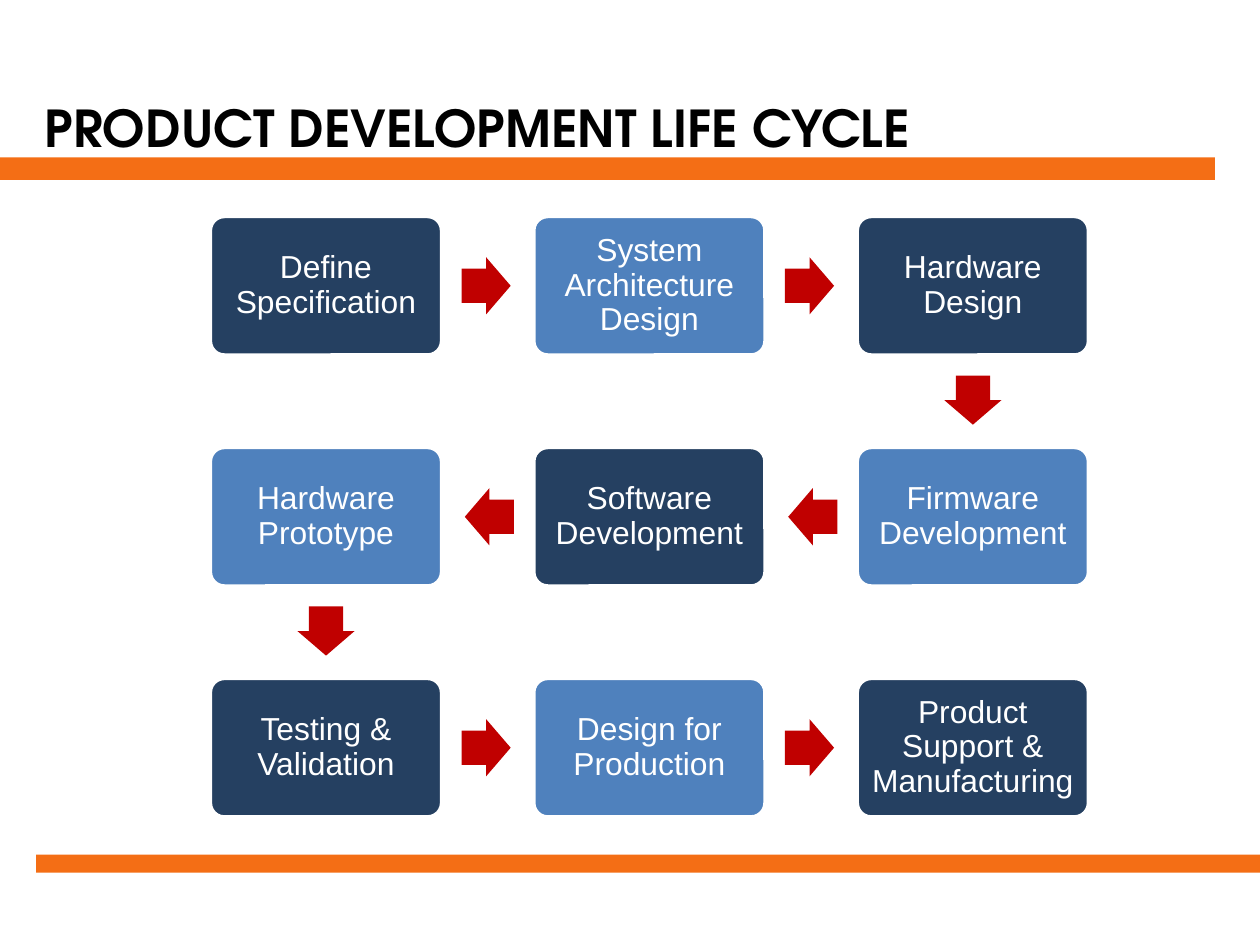
from dataclasses import dataclass
from itertools import pairwise

from pptx import Presentation
from pptx.dml.color import RGBColor
from pptx.enum.shapes import MSO_SHAPE
from pptx.enum.text import MSO_ANCHOR, PP_ALIGN
from pptx.shapes.autoshape import Shape
from pptx.slide import Slide
from pptx.util import Cm, Inches, Pt

RECTANGLE, ROUNDED = MSO_SHAPE.RECTANGLE, MSO_SHAPE.ROUNDED_RECTANGLE
ARROW = MSO_SHAPE.RIGHT_ARROW
MIDDLE, BOTTOM = MSO_ANCHOR.MIDDLE, MSO_ANCHOR.BOTTOM
LEFT, CENTER = PP_ALIGN.LEFT, PP_ALIGN.CENTER
SLIDE_WIDTH = Cm(28)
SLIDE_HEIGHT = Cm(21)


@dataclass(frozen=True)
class Theme:
    bar: str = "F46E15"
    step_fills: tuple[str, str] = ("254061", "4F81BD")
    step_text: str = "FFFFFF"
    step_line: str = "FFFFFF"
    step_line_width: float = 2
    arrow: str = "C00000"
    title_text: str = "000000"
    title_font: str = "TeX Gyre Adventor"
    title_size: float = 32
    step_font: str = "Arial"
    step_size: float = 20


@dataclass(frozen=True)
class Area:
    """A rectangle in percent of the slide's width and height."""
    left: float
    top: float
    width: float
    height: float

    def lengths(self) -> tuple[int, int, int, int]:
        return (round(self.left * SLIDE_WIDTH / 100),
                round(self.top * SLIDE_HEIGHT / 100),
                round(self.width * SLIDE_WIDTH / 100),
                round(self.height * SLIDE_HEIGHT / 100))


@dataclass(frozen=True)
class Step:
    label: str
    column: int
    row: int
    fill: str


THEME = Theme()
TITLE = "PRODUCT DEVELOPMENT LIFE CYCLE"
TITLE_AREA = Area(3.57, 4.76, 92.86, 11.9)
BARS = (Area(0, 16.65, 96.43, 2.4), Area(2.88, 90.43, 97.12, 1.93))

COLUMNS = 3
FIRST_STEP = Area(16.71, 22.93, 18.33, 14.63)
COLUMN_PITCH, ROW_PITCH = 25.67, 24.44
ARROW_WIDTH, ARROW_HEIGHT = 3.9, 6.05
ARROW_POSITION = 0.495  # share of the way from one step to the next
LABELS = (
    "Define Specification", "System Architecture Design", "Hardware Design",
    "Firmware Development", "Software Development", "Hardware Prototype",
    "Testing & Validation", "Design for Production",
    "Product Support & Manufacturing",
)


def snake_steps() -> list[Step]:
    """Lay the steps out row by row, every second row from right to left."""
    steps = []
    for index, label in enumerate(LABELS):
        row, column = divmod(index, COLUMNS)
        if row % 2:
            column = COLUMNS - 1 - column
        steps.append(Step(label, column, row, THEME.step_fills[index % 2]))
    return steps


def add_filled(page: Slide, kind: MSO_SHAPE, area: Area, fill: str) -> Shape:
    box = page.shapes.add_shape(kind, *area.lengths())
    box.shadow.inherit = False
    box.fill.solid()
    box.fill.fore_color.rgb = RGBColor.from_string(fill)
    box.line.fill.background()
    return box


def write_text(box: Shape, text: str, color: str, frame_format: dict,
               para_format: dict, font_format: dict) -> None:
    frame = box.text_frame
    para = frame.paragraphs[0]
    span = para.add_run()
    span.text = text
    span.font.color.rgb = RGBColor.from_string(color)
    for target, values in ((frame, frame_format), (para, para_format),
                           (span.font, font_format)):
        for name, value in values.items():
            setattr(target, name, value)


def frame_values(margin: float, anchor: MSO_ANCHOR) -> dict:
    sides = ("left", "top", "right", "bottom")
    margins = {f"margin_{side}": Inches(margin) for side in sides}
    return margins | {"word_wrap": True, "vertical_anchor": anchor}


def add_title(page: Slide) -> None:
    box = page.shapes.add_textbox(*TITLE_AREA.lengths())
    write_text(box, TITLE, THEME.title_text, frame_values(0, BOTTOM),
               {"alignment": LEFT},
               {"name": THEME.title_font, "size": Pt(THEME.title_size),
                "bold": True})


def add_step(page: Slide, step: Step) -> None:
    area = Area(FIRST_STEP.left + step.column * COLUMN_PITCH,
                FIRST_STEP.top + step.row * ROW_PITCH,
                FIRST_STEP.width, FIRST_STEP.height)
    box = add_filled(page, ROUNDED, area, step.fill)
    box.adjustments[0] = 0.1
    box.line.color.rgb = RGBColor.from_string(THEME.step_line)
    box.line.width = Pt(THEME.step_line_width)
    write_text(box, step.label, THEME.step_text, frame_values(0.04, MIDDLE),
               {"alignment": CENTER, "line_spacing": 0.9},
               {"name": THEME.step_font, "size": Pt(THEME.step_size)})


def add_arrow(page: Slide, start: Step, end: Step) -> None:
    across, down = end.column - start.column, end.row - start.row
    column = start.column + across * ARROW_POSITION
    row = start.row + down * ARROW_POSITION
    middle_x = FIRST_STEP.left + FIRST_STEP.width / 2 + column * COLUMN_PITCH
    middle_y = FIRST_STEP.top + FIRST_STEP.height / 2 + row * ROW_PITCH
    area = Area(middle_x - ARROW_WIDTH / 2, middle_y - ARROW_HEIGHT / 2,
                ARROW_WIDTH, ARROW_HEIGHT)
    arrow = add_filled(page, ARROW, area, THEME.arrow)
    arrow.adjustments[0], arrow.adjustments[1] = 0.6, 0.5
    arrow.rotation = {(1, 0): 0, (0, 1): 90, (-1, 0): 180}[across, down]


def main() -> None:
    deck = Presentation()
    deck.slide_width = SLIDE_WIDTH
    deck.slide_height = SLIDE_HEIGHT
    page = deck.slides.add_slide(deck.slide_layouts[6])
    for bar in BARS:
        add_filled(page, RECTANGLE, bar, THEME.bar)
    add_title(page)
    steps = snake_steps()
    for step in steps:
        add_step(page, step)
    for start, end in pairwise(steps):
        add_arrow(page, start, end)
    deck.save("out.pptx")


if __name__ == "__main__":
    main()
